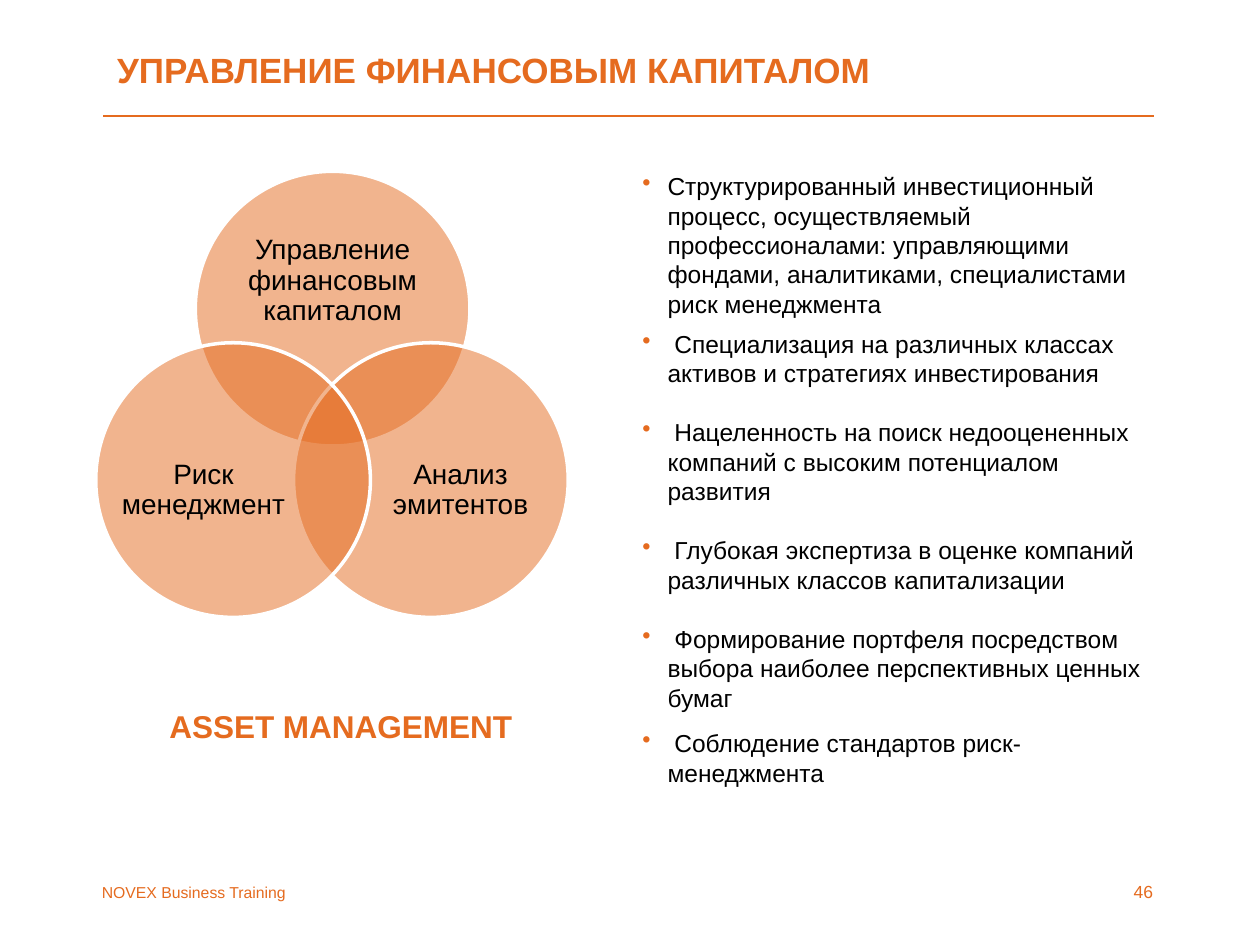
from lxml import etree
from pptx import Presentation
from pptx.dml.color import RGBColor
from pptx.enum import shapes, text
from pptx.oxml import ns
from pptx.util import Inches, Pt

ORANGE = RGBColor(0xE5, 0x6B, 0x1F)
WHITE = RGBColor(0xFF, 0xFF, 0xFF)
BLACK = RGBColor(0, 0, 0)
FONT = "Arial"
LEFT, CENTER, RIGHT = text.PP_ALIGN.LEFT, text.PP_ALIGN.CENTER, text.PP_ALIGN.RIGHT

TITLE = "УПРАВЛЕНИЕ ФИНАНСОВЫМ КАПИТАЛОМ"
DIAMETER = 2.18
CIRCLES = [
    ((1.55, 1.36), "Управление финансовым капиталом", (1.84, 1.74, 1.6, 0.98)),
    ((2.33, 2.72), "Анализ эмитентов", (3, 3.29, 1.31, 1.2)),
    ((0.76, 2.72), "Риск менеджмент", (0.96, 3.29, 1.31, 1.2)),
]
BULLET_BOXES = [
    ((5, 1.31, 4.17, 1.31), [
        "Структурированный инвестиционный процесс, осуществляемый профессионалами: "
        "управляющими фондами, аналитиками, специалистами риск менеджмента",
    ]),
    ((5, 2.56, 4.17, 3.03), [
        " Специализация на различных классах активов и стратегиях инвестирования",
        " Нацеленность на поиск недооцененных компаний с высоким потенциалом развития",
        " Глубокая экспертиза в оценке компаний различных классов капитализации",
        " Формирование портфеля посредством выбора наиболее перспективных ценных бумаг",
    ]),
    ((5, 5.73, 4.43, 0.39), [" Соблюдение стандартов риск-менеджмента"]),
]
CAPTIONS = [
    ((1.13, 5.56, 3.15, 0.4), "ASSET MANAGEMENT", 18, CENTER, True),
    ((0.71, 6.96, 2.03, 0.25), "NOVEX Business Training", 9, LEFT, False),
    ((8.75, 6.94, 0.5, 0.27), "46", 10, RIGHT, False),
]


def write(shape, lines, size, color, align=LEFT, bold=False):
    frame = shape.text_frame
    frame.word_wrap = True
    frame.text = "\n".join(lines)
    for paragraph in frame.paragraphs:
        paragraph.alignment = align
        for run in paragraph.runs:
            run.font.name = FONT
            run.font.size = Pt(size)
            run.font.bold = bold
            run.font.color.rgb = color
    return frame


def add_text(slide, box, lines, size, color, align=LEFT, bold=False):
    shape = slide.shapes.add_textbox(*map(Inches, box))
    return write(shape, lines, size, color, align, bold)


def add_bullet(paragraph):
    properties = paragraph._p.get_or_add_pPr()
    properties.set("marL", str(Inches(0.2)))
    properties.set("indent", str(Inches(-0.2)))
    bullet_color = etree.SubElement(properties, ns.qn("a:buClr"))
    etree.SubElement(bullet_color, ns.qn("a:srgbClr"), val=str(ORANGE))
    etree.SubElement(properties, ns.qn("a:buChar"), char="•")


def add_circle(slide, position):
    circle = slide.shapes.add_shape(
        shapes.MSO_SHAPE.OVAL, *map(Inches, (*position, DIAMETER, DIAMETER)))
    circle.shadow.inherit = False
    circle.fill.solid()
    circle.fill.fore_color.rgb = ORANGE
    fill_color = circle._element.spPr.find(ns.qn("a:solidFill"))[0]
    etree.SubElement(fill_color, ns.qn("a:alpha"), val="50000")
    circle.line.color.rgb = WHITE
    circle.line.width = Pt(2)


def add_label(slide, box, label):
    frame = add_text(slide, box, [label], 16, BLACK, CENTER)
    frame.vertical_anchor = text.MSO_ANCHOR.MIDDLE
    frame.margin_left = frame.margin_right = frame.margin_top = frame.margin_bottom = 0
    frame.paragraphs[0].line_spacing = 0.9


def main():
    presentation = Presentation()
    presentation.slide_width, presentation.slide_height = Inches(10), Inches(7.5)
    slide = presentation.slides.add_slide(presentation.slide_layouts[5])

    title = slide.shapes.title
    title.left, title.top, title.width, title.height = map(Inches, (0.83, 0.19, 8.94, 0.72))
    write(title, [TITLE], 20, ORANGE, bold=True).vertical_anchor = text.MSO_ANCHOR.MIDDLE

    rule = slide.shapes.add_connector(
        shapes.MSO_CONNECTOR.STRAIGHT, *map(Inches, (0.82, 0.92, 9.16, 0.92)))
    rule.line.color.rgb = ORANGE
    rule.line.width = Pt(1)
    etree.SubElement(rule._element.spPr, ns.qn("a:effectLst"))

    for position, label, label_box in CIRCLES:
        add_circle(slide, position)
        add_label(slide, label_box, label)

    for box, items in BULLET_BOXES:
        paragraphs = add_text(slide, box, items, 14, BLACK).paragraphs
        for paragraph in paragraphs:
            paragraph.space_after = Pt(17 if len(items) > 1 else 0)
            add_bullet(paragraph)

    for box, caption, size, align, bold in CAPTIONS:
        add_text(slide, box, [caption], size, ORANGE, align, bold)

    presentation.save("out.pptx")


if __name__ == "__main__":
    main()
